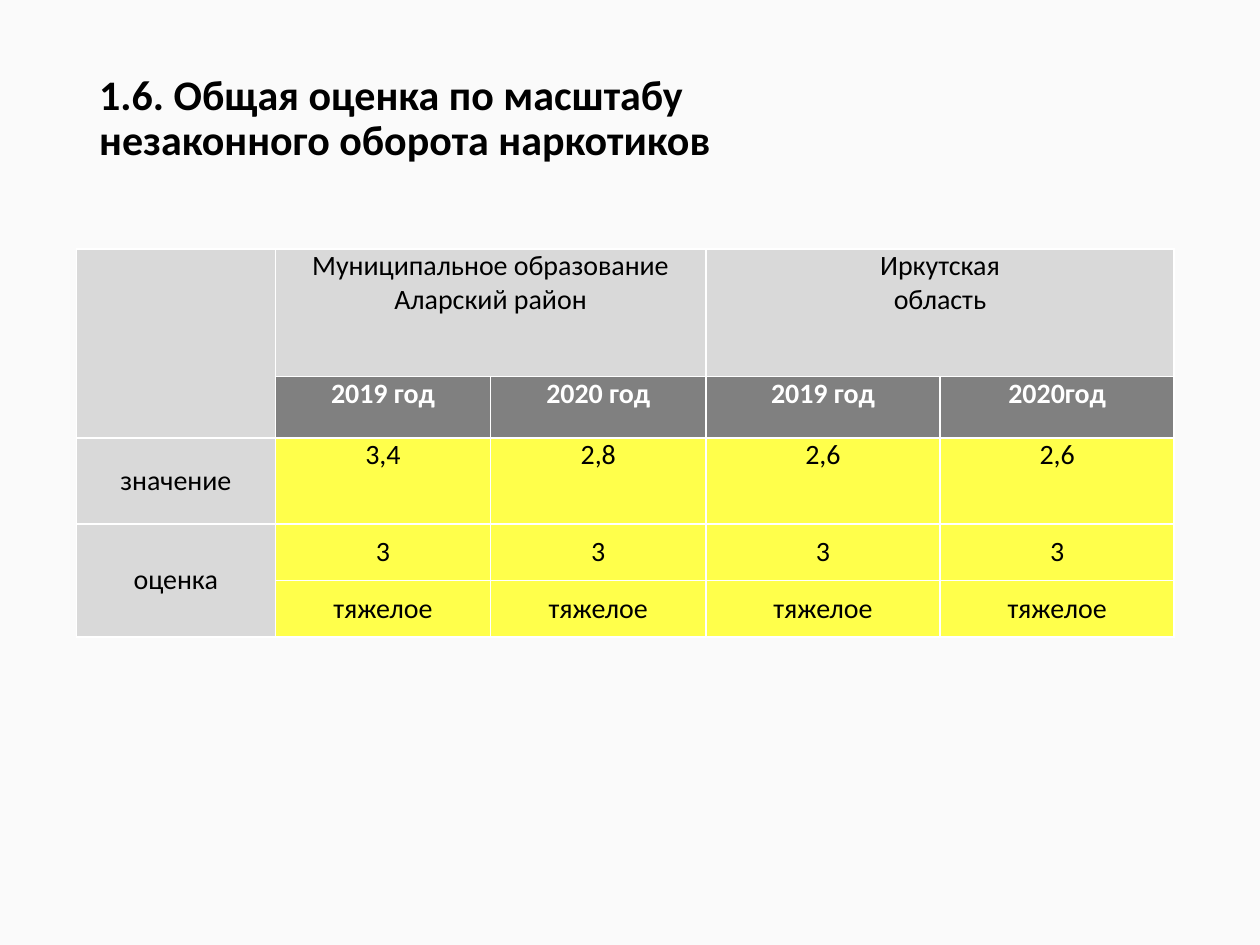
"""Build the slide with the overall rating of the scale of illegal drug trafficking."""
from dataclasses import dataclass

from lxml import etree
from pptx import Presentation
from pptx import util as u
from pptx.dml.color import RGBColor
from pptx.enum import text
from pptx.oxml.ns import qn


@dataclass(frozen=True)
class Theme:
    font: str = "Calibri"
    title_size: int = 24
    body_size: int = 16
    background: str = "FAFAFA"
    ink: str = "000000"
    white: str = "FFFFFF"
    label: str = "D9D9D9"
    year: str = "808080"
    rating: str = "FFFF4B"


theme = Theme()


def add_run(paragraph, words, size, color, bold=False):
    run = paragraph.add_run()
    run.text = words
    run.font.name = theme.font
    run.font.size = u.Pt(size)
    run.font.bold = bold
    run.font.color.rgb = RGBColor.from_string(color)


def add_borders(cell):
    properties = cell._tc.get_or_add_tcPr()
    for side in ("lnL", "lnR", "lnT", "lnB"):
        line = etree.SubElement(properties, qn(f"a:{side}"), w=str(u.Pt(1)))
        fill = etree.SubElement(line, qn("a:solidFill"))
        etree.SubElement(fill, qn("a:srgbClr"), val=theme.white)


prs = Presentation()
prs.slide_width, prs.slide_height = u.Cm(25.4), u.Cm(19.05)
slide = prs.slides.add_slide(prs.slide_layouts[6])
slide.background.fill.solid()
slide.background.fill.fore_color.rgb = RGBColor.from_string(theme.background)

heading = slide.shapes.add_textbox(u.Cm(1.75), u.Cm(1.02), u.Cm(21.9), u.Cm(3.68)).text_frame
heading.word_wrap = True
heading.vertical_anchor = text.MSO_ANCHOR.MIDDLE
heading.margin_bottom = u.Cm(1.04)
heading_line = heading.paragraphs[0]
heading_line.line_spacing = 0.9
add_run(heading_line, "1.6. Общая оценка по масштабу", theme.title_size, theme.ink, True)
heading_line.add_line_break()
add_run(heading_line, "незаконного оборота наркотиков", theme.title_size, theme.ink, True)

column_widths = [4.01, 4.34, 4.34, 4.72, 4.72]
row_heights = [2.57, 1.24, 1.73, 1.14, 1.14]
ratings = [
    ["", "Муниципальное образование Аларский район", "", "Иркутская\nобласть", ""],
    ["", "2019 год", "2020 год", "2019 год", "2020год"],
    ["значение", "3,4", "2,8", "2,6", "2,6"],
    ["оценка", "3", "3", "3", "3"],
    ["", "тяжелое", "тяжелое", "тяжелое", "тяжелое"],
]
merges = [((0, 0), (1, 0)), ((0, 1), (0, 2)), ((0, 3), (0, 4)), ((3, 0), (4, 0))]

table = slide.shapes.add_table(
    len(row_heights), len(column_widths), u.Cm(1.54), u.Cm(5.02),
    u.Cm(sum(column_widths)), u.Cm(sum(row_heights))).table
table.first_row = table.horz_banding = False
for column, width in zip(table.columns, column_widths):
    column.width = u.Cm(width)
for row, height in zip(table.rows, row_heights):
    row.height = u.Cm(height)
for first, last in merges:
    table.cell(*first).merge(table.cell(*last))

for r, entries in enumerate(ratings):
    for c, entry in enumerate(entries):
        cell = table.cell(r, c)
        is_year = r == 1 and c > 0
        is_label = r == 0 or c == 0
        add_borders(cell)
        cell.fill.solid()
        cell.fill.fore_color.rgb = RGBColor.from_string(
            theme.year if is_year else theme.label if is_label else theme.rating)
        cell.margin_left = cell.margin_right = u.Cm(0.18)
        cell.margin_top = cell.margin_bottom = 0
        if r > 2 or (r == 2 and c == 0):
            cell.vertical_anchor = text.MSO_ANCHOR.MIDDLE
        if not entry:
            continue
        for i, words in enumerate(entry.split("\n")):
            paragraph = cell.text_frame.add_paragraph() if i else cell.text_frame.paragraphs[0]
            paragraph.alignment = text.PP_ALIGN.CENTER
            add_run(paragraph, words, theme.body_size,
                    theme.white if is_year else theme.ink, is_year)

prs.save("out.pptx")
